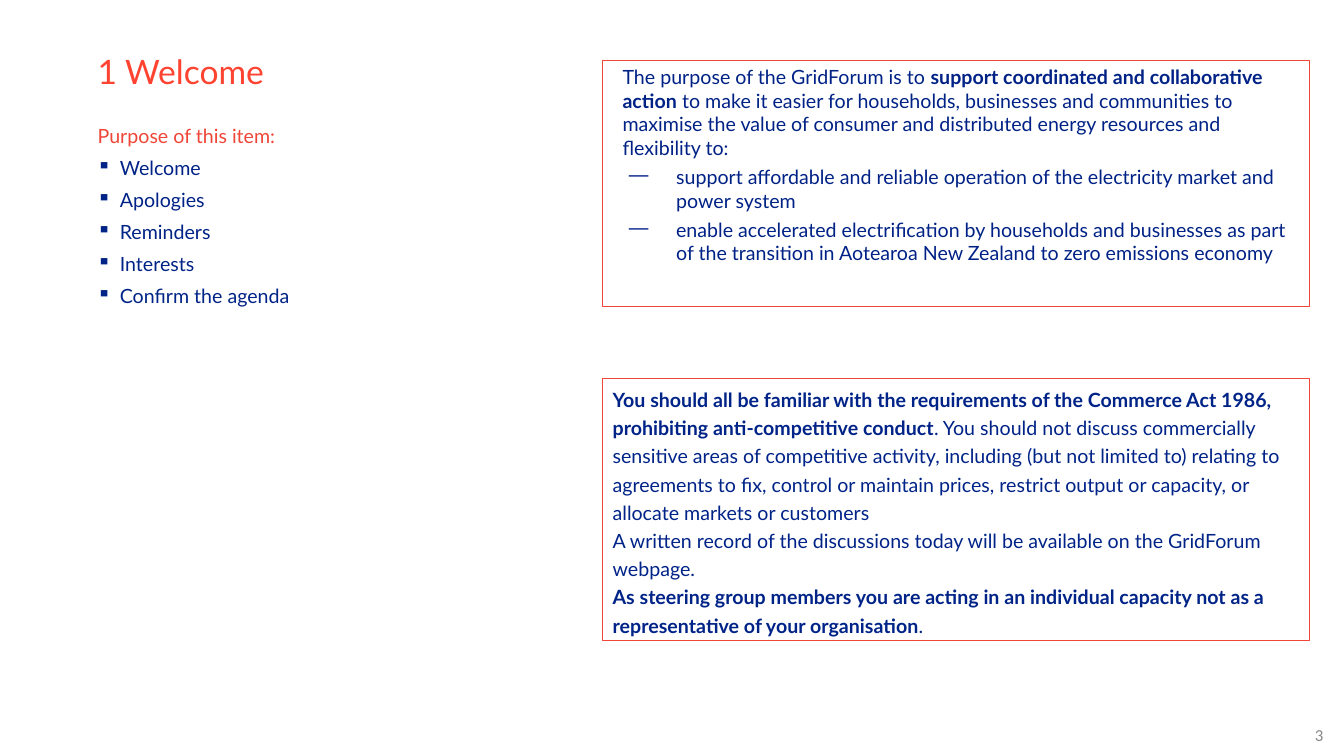
import pptx
import pptx.dml.color
import pptx.enum.shapes
import pptx.enum.text
import pptx.oxml
import pptx.oxml.ns
import pptx.util

Cm = pptx.util.Cm
Pt = pptx.util.Pt
Anchor = pptx.enum.text.MSO_ANCHOR
Align = pptx.enum.text.PP_ALIGN
AutoSize = pptx.enum.text.MSO_AUTO_SIZE

COLOURS = {
    "title": "FF4331",
    "accent": "EF4637",
    "agenda": "002387",
    "purpose": "002286",
    "conduct": "002388",
    "number": "888888",
    "paper": "FFFFFF",
}

AGENDA = ["Welcome", "Apologies", "Reminders", "Interests", "Confirm the agenda"]

# Each paragraph is a list of (text, bold) runs
PURPOSE = [
    ("The purpose of the GridForum is to ", False),
    ("support coordinated and collaborative action", True),
    (" to make it easier for households, businesses and communities to maximise "
     "the value of consumer and distributed energy resources and flexibility to:", False),
]
AIMS = [
    "support affordable and reliable operation of the electricity market and power system",
    "enable accelerated electrification by households and businesses as part of the "
    "transition in Aotearoa New Zealand to zero emissions economy",
]
CONDUCT = [
    [("You should all be familiar with the requirements of the Commerce Act 1986, "
      "prohibiting anti-competitive conduct", True),
     (". You should not discuss commercially sensitive areas of competitive activity, "
      "including (but not limited to) relating to agreements to fix, control or maintain "
      "prices, restrict output or capacity, or allocate markets or customers", False)],
    [("A written record of the discussions today will be available on the GridForum "
      "webpage.", False)],
    [("As steering group members you are acting in an individual capacity not as a "
      "representative of your organisation", True),
     (".", False)],
]


def rgb(name):
    return pptx.dml.color.RGBColor.from_string(COLOURS[name])


def apply(target, values):
    for name, value in values.items():
        setattr(target, name, value)


def set_indent(paragraph, left, hanging=0):
    properties = paragraph._p.get_or_add_pPr()
    properties.set("marL", str(Cm(left)))
    properties.set("indent", str(Cm(-hanging)))
    return properties


def set_bullet(paragraph, mark, colour, left, hanging):
    properties = set_indent(paragraph, left, hanging)
    namespace = pptx.oxml.ns.nsdecls("a")
    for xml in (
        f'<a:buClr {namespace}><a:srgbClr val="{COLOURS[colour]}"/></a:buClr>',
        f'<a:buChar {namespace} char="{mark}"/>',
    ):
        properties.append(pptx.oxml.parse_xml(xml))


def add_paragraph(frame, runs, colour, size=14, font="Lato", **layout):
    first = frame.paragraphs[0]
    paragraph = frame.add_paragraph() if first.runs else first
    apply(paragraph, layout)
    for text, bold in runs:
        run = paragraph.add_run()
        run.text = text
        apply(run.font, {"name": font, "size": Pt(size), "bold": bold})
        run.font.color.rgb = rgb(colour)
    return paragraph


def add_text_area(slide, left, top, width, height, anchor=Anchor.TOP):
    area = slide.shapes.add_textbox(Cm(left), Cm(top), Cm(width), Cm(height))
    apply(area.text_frame, {"word_wrap": True, "vertical_anchor": anchor})
    return area.text_frame


def add_panel(slide, top, height, fill=None, auto_size=AutoSize.NONE):
    panel = slide.shapes.add_shape(
        pptx.enum.shapes.MSO_SHAPE.RECTANGLE, Cm(15.19), Cm(top), Cm(17.81), Cm(height))
    panel.shadow.inherit = False
    if fill:
        panel.fill.solid()
        panel.fill.fore_color.rgb = rgb(fill)
    else:
        panel.fill.background()
    panel.line.color.rgb = rgb("accent")
    panel.line.width = Pt(0.75)
    apply(panel.text_frame, {
        "word_wrap": True, "vertical_anchor": Anchor.TOP, "auto_size": auto_size})
    return panel.text_frame


def main():
    deck = pptx.Presentation()
    apply(deck, {"slide_width": Cm(33.87), "slide_height": Cm(19.05)})
    slide = deck.slides.add_slide(deck.slide_layouts[6])

    # Page number
    number = add_text_area(slide, 32, 18.01, 1.6, 1.02, Anchor.MIDDLE)
    add_paragraph(number, [("3", False)], "number", 12, "Calibri", alignment=Align.RIGHT)

    # Title
    title = add_text_area(slide, 2.01, 0.71, 30.99, 2.31, Anchor.MIDDLE)
    heading = add_paragraph(title, [("1 Welcome", False)], "title", 24, line_spacing=0.9)
    set_indent(heading, 0.2)

    # Agenda list
    agenda = add_text_area(slide, 2.01, 3, 13.18, 14.63)
    lead = add_paragraph(agenda, [("Purpose of this item:", False)], "accent")
    set_indent(lead, 0.2)
    for item in AGENDA:
        entry = add_paragraph(agenda, [(item, False)], "agenda", space_before=Pt(6))
        set_bullet(entry, "▪", "agenda", 0.76, 0.58)

    # Conduct reminder
    conduct = add_panel(slide, 9.53, 6.6, auto_size=AutoSize.SHAPE_TO_FIT_TEXT)
    for runs in CONDUCT:
        add_paragraph(conduct, runs, "conduct", alignment=Align.LEFT, line_spacing=1.2)

    # Forum purpose
    purpose = add_panel(slide, 1.52, 6.2, fill="paper")
    statement = add_paragraph(purpose, PURPOSE, "purpose", alignment=Align.LEFT)
    set_indent(statement, 0.25)
    for aim in AIMS:
        entry = add_paragraph(purpose, [(aim, False)], "purpose",
                              alignment=Align.LEFT, space_before=Pt(4))
        set_bullet(entry, "—", "conduct", 1.6, 1.19)

    deck.save("out.pptx")


if __name__ == "__main__":
    main()
